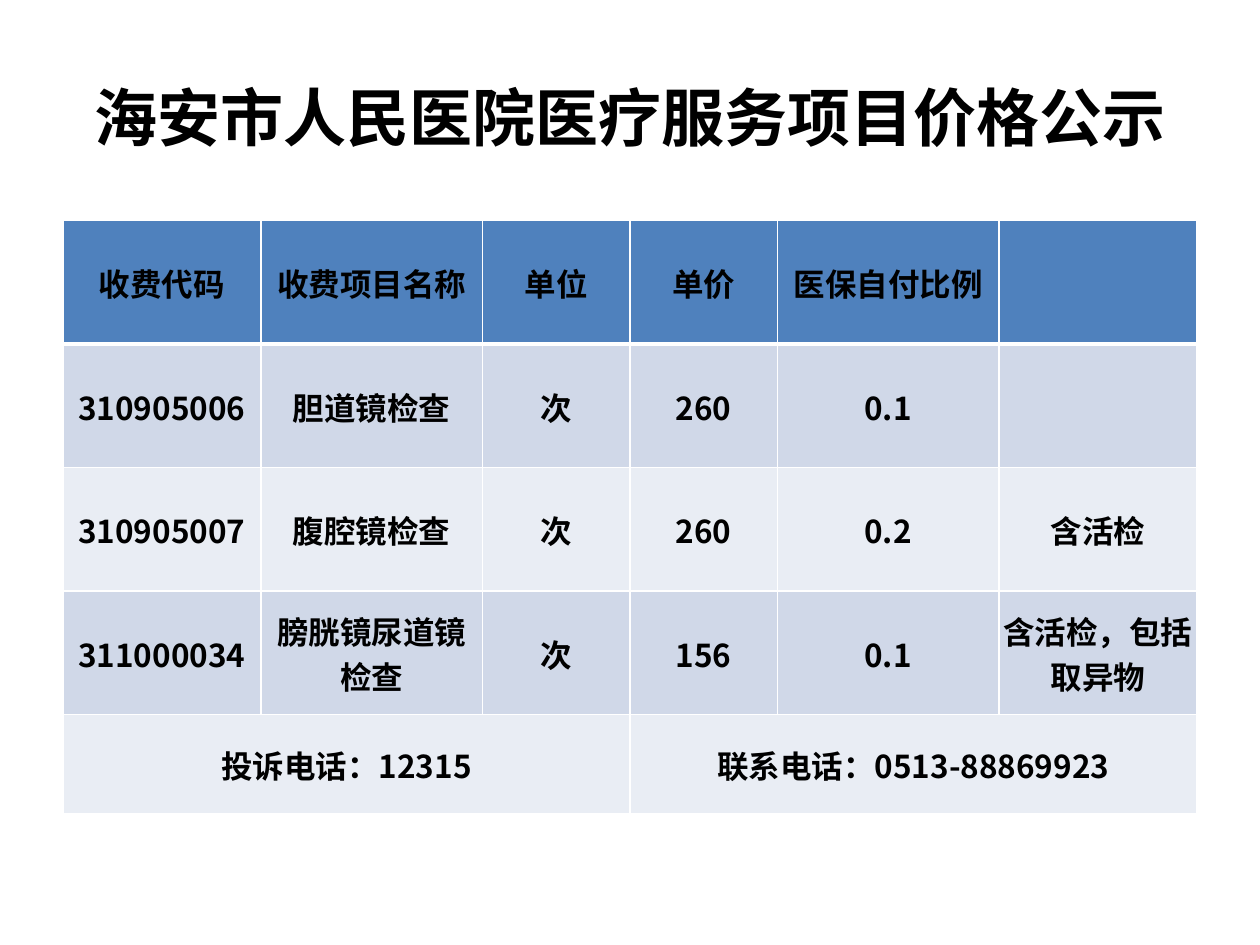
from dataclasses import dataclass

from lxml.etree import SubElement
from pptx import Presentation
from pptx.dml.color import RGBColor as Color
from pptx.enum.text import MSO_ANCHOR as Anchor, PP_ALIGN as Align
from pptx.oxml.ns import qn
from pptx.util import Inches, Pt


@dataclass(frozen=True)
class Theme:
    title_font: str = "Calibri"
    table_font: str = "Noto Sans CJK SC"
    title_size: int = 36
    table_size: int = 18
    text: str = "000000"
    header: str = "4F81BD"
    bands: tuple = ("D0D8E8", "E9EDF4")
    border: str = "FFFFFF"
    thin: int = 1
    thick: int = 3


THEME = Theme()
WIDTH, HEIGHT = 10, 7.5
MARGIN = WIDTH / 20
COLUMN_WIDTHS = (1.57, 1.76, 1.17, 1.17, 1.76, 1.57)
ROW_HEIGHTS = (0.98, 0.98, 0.98, 0.98, 0.79)

TITLE = "海安市人民医院医疗服务项目价格公示"
PRICES = (
    ("收费代码", "收费项目名称", "单位", "单价", "医保自付比例", ""),
    ("310905006", "胆道镜检查", "次", "260", "0.1", ""),
    ("310905007", "腹腔镜检查", "次", "260", "0.2", "含活检"),
    ("311000034", "膀胱镜尿道镜检查", "次", "156", "0.1", "含活检，包括取异物"),
)
PHONES = ("投诉电话：12315", "联系电话：0513-88869923")


def write_text(frame, text, font_name, size):
    paragraph = frame.paragraphs[0]
    paragraph.text = text
    paragraph.alignment = Align.CENTER
    font = paragraph.font
    font.name, font.size, font.bold = font_name, Pt(size), True
    font.color.rgb = Color.from_string(THEME.text)


def add_title(slide, left, top, width, height):
    box = slide.shapes.add_textbox(*map(Inches, (left, top, width, height)))
    frame = box.text_frame
    frame.word_wrap = True
    frame.vertical_anchor = Anchor.MIDDLE
    write_text(frame, TITLE, THEME.title_font, THEME.title_size)


def add_borders(cell, top, bottom):
    properties = cell._tc.get_or_add_tcPr()
    sides = {"lnL": THEME.thin, "lnR": THEME.thin, "lnT": top, "lnB": bottom}
    for side, points in sides.items():
        line = SubElement(properties, qn(f"a:{side}"), w=str(Pt(points)))
        fill = SubElement(line, qn("a:solidFill"))
        SubElement(fill, qn("a:srgbClr"), val=THEME.border)


def style_cell(cell, row):
    # The heavy rule lies between the header and the first data row
    add_borders(cell,
                top=THEME.thick if row == 1 else THEME.thin,
                bottom=THEME.thick if row == 0 else THEME.thin)
    cell.fill.solid()
    fill = THEME.bands[(row - 1) % 2] if row else THEME.header
    cell.fill.fore_color.rgb = Color.from_string(fill)
    cell.vertical_anchor = Anchor.MIDDLE
    cell.margin_left = cell.margin_right = cell.margin_top = Inches(0.01)
    cell.margin_bottom = 0


def add_price_table(slide, left, top, width, height):
    rows, columns = len(ROW_HEIGHTS), len(COLUMN_WIDTHS)
    table = slide.shapes.add_table(
        rows, columns, *map(Inches, (left, top, width, height))).table

    # Grid, as shares of the box
    for column, share in zip(table.columns, COLUMN_WIDTHS):
        column.width = Inches(width * share / sum(COLUMN_WIDTHS))
    for row, share in zip(table.rows, ROW_HEIGHTS):
        row.height = Inches(height * share / sum(ROW_HEIGHTS))
    for row in range(rows):
        for column in range(columns):
            style_cell(table.cell(row, column), row)

    # Prices
    for row, values in enumerate(PRICES):
        for column, value in enumerate(values):
            write_text(table.cell(row, column).text_frame, value,
                       THEME.table_font, THEME.table_size)

    # Phone numbers, each across half of the last row
    span = columns // len(PHONES)
    for index, phone in enumerate(PHONES):
        cell = table.cell(rows - 1, index * span)
        cell.merge(table.cell(rows - 1, (index + 1) * span - 1))
        write_text(cell.text_frame, phone, THEME.table_font, THEME.table_size)


def main():
    presentation = Presentation()
    presentation.slide_width = Inches(WIDTH)
    presentation.slide_height = Inches(HEIGHT)
    slide = presentation.slides.add_slide(presentation.slide_layouts[6])
    content_width = WIDTH - 2 * MARGIN
    add_title(slide, MARGIN, HEIGHT * 0.04, content_width, HEIGHT / 6)
    add_price_table(slide, MARGIN, 1.75, content_width, sum(ROW_HEIGHTS))
    presentation.save("out.pptx")


if __name__ == "__main__":
    main()
